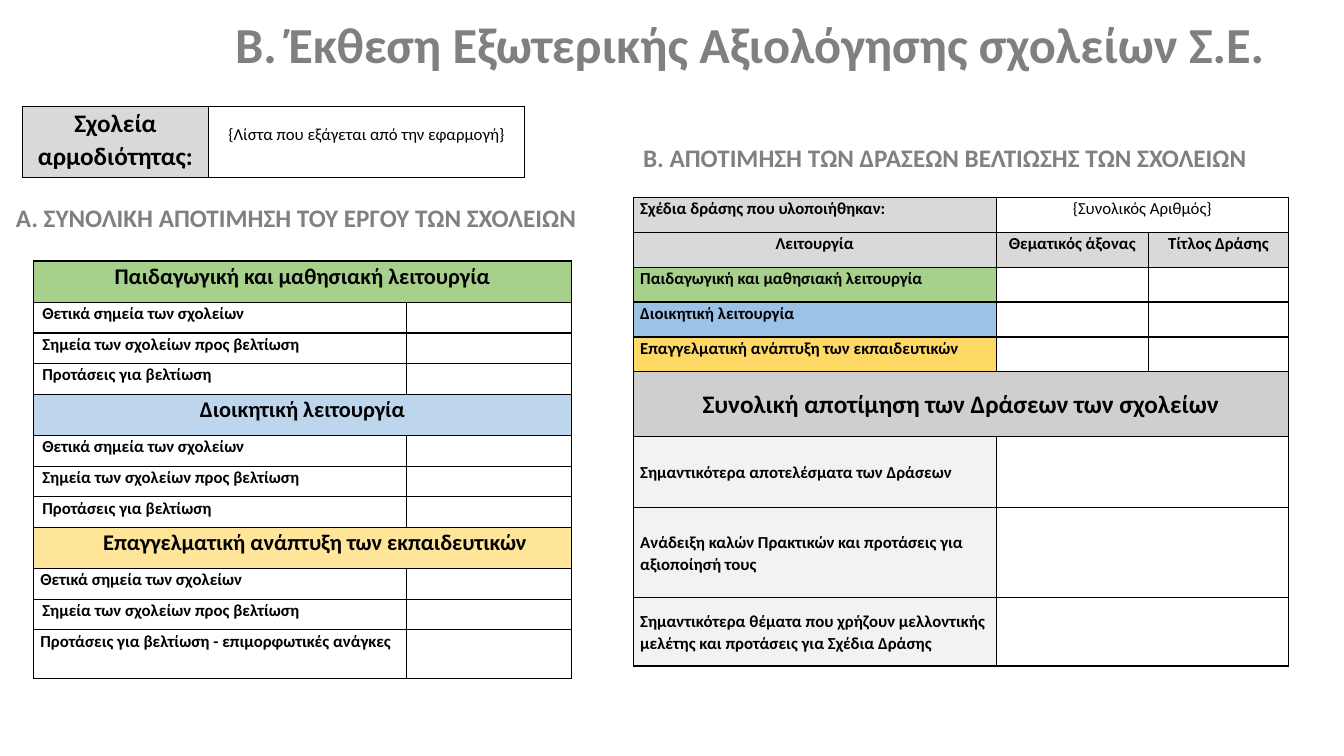
import pptx
import pptx.util
import pptx.dml.color
import pptx.enum.text
import pptx.oxml
import pptx.oxml.ns
from pptx.util import Inches

COLORS = {
    "heading": "808080", "text": "000000", "label": "D9D9D9", "summary": "D0CECE", "pale": "F2F2F2",
    "green": "A8D08D", "light_blue": "BDD6EE", "blue": "9CC2E5", "light_gold": "FFE599", "gold": "FFD966",
}
LEFT, CENTER = pptx.enum.text.PP_ALIGN.LEFT, pptx.enum.text.PP_ALIGN.CENTER
TOP, MIDDLE = pptx.enum.text.MSO_ANCHOR.TOP, pptx.enum.text.MSO_ANCHOR.MIDDLE


def add_grid(left, top, widths, heights):
    """Add an unfilled table with thin black borders around every cell."""
    frame = slide.shapes.add_table(len(heights), len(widths), Inches(left), Inches(top),
                                   Inches(sum(widths)), Inches(sum(heights)))
    table = frame.table
    table.first_row = table.horz_banding = False
    for column, width in zip(table.columns, widths):
        column.width = Inches(width)
    for row, height in zip(table.rows, heights):
        row.height = Inches(height)
    for cell in table.iter_cells():
        cell.margin_left = cell.margin_right = Inches(0.07)
        cell.margin_top = cell.margin_bottom = 0
        properties = cell._tc.get_or_add_tcPr()
        for side in ("lnL", "lnR", "lnT", "lnB"):
            properties.append(pptx.oxml.parse_xml(
                f'<a:{side} {pptx.oxml.ns.nsdecls("a")} w="12700"><a:solidFill>'
                f'<a:srgbClr val="{COLORS["text"]}"/></a:solidFill></a:{side}>'))
        cell.fill.background()
        cell.text_frame.paragraphs[0]._p.get_or_add_endParaRPr().set("sz", "1200")
    return table


def write(target, text, size=12, color="text", align=LEFT, bold=True, spacing=1.07, fill=None, anchor=TOP):
    """Put one formatted paragraph in a cell or text box."""
    target.text_frame.text = text
    para = target.text_frame.paragraphs[0]
    para.alignment = align
    para.line_spacing = spacing
    font = para.runs[0].font
    font.name, font.size, font.bold = "Calibri", pptx.util.Pt(size), bold
    font.color.rgb = pptx.dml.color.RGBColor.from_string(COLORS[color])
    if fill:
        target.fill.solid()
        target.fill.fore_color.rgb = pptx.dml.color.RGBColor.from_string(COLORS[fill])
    if anchor != TOP:
        target.vertical_anchor = anchor


deck = pptx.Presentation()
deck.slide_width, deck.slide_height = Inches(13.33), Inches(7.5)
slide = deck.slides.add_slide(deck.slide_layouts[6])

# Headings
headings = [
    ("Β. Έκθεση Εξωτερικής Αξιολόγησης σχολείων Σ.Ε.", (1.55, 0.12, 11.78, 0.7), 36, CENTER, 0.9),
    ("Α. ΣΥΝΟΛΙΚΗ ΑΠΟΤΙΜΗΣΗ ΤΟΥ ΕΡΓΟΥ ΤΩΝ ΣΧΟΛΕΙΩΝ", (0.06, 1.96, 5.88, 0.4), 18, LEFT, 1.0),
    ("Β. ΑΠΟΤΙΜΗΣΗ ΤΩΝ ΔΡΑΣΕΩΝ ΒΕΛΤΙΩΣΗΣ ΤΩΝ ΣΧΟΛΕΙΩΝ", (6.28, 1.36, 6.49, 0.4), 18, LEFT, 1.0),
]
for text, place, size, align, spacing in headings:
    box = slide.shapes.add_textbox(*map(Inches, place))
    box.text_frame.word_wrap = True
    box.text_frame.vertical_anchor = MIDDLE
    write(box, text, size, "heading", align, spacing=spacing)

# Schools in charge
schools = add_grid(0.22, 1.06, [1.85, 3.13], [0.7])
write(schools.cell(0, 0), "Σχολεία αρμοδιότητας:", 18, align=CENTER, fill="label")
write(schools.cell(0, 1), "{Λίστα που εξάγεται από την εφαρμογή}", align=CENTER, bold=False)
schools.cell(0, 1).margin_top = Inches(0.16)

# Overall appraisal: three functions with three points each
last_point = "Προτάσεις για βελτίωση - επιμορφωτικές ανάγκες"
points = ["Θετικά σημεία των σχολείων", "Σημεία των σχολείων προς βελτίωση", "Προτάσεις για βελτίωση"]
functions = [
    ("Παιδαγωγική και μαθησιακή λειτουργία", "green", points),
    ("Διοικητική λειτουργία", "light_blue", points),
    ("Επαγγελματική ανάπτυξη των εκπαιδευτικών", "light_gold", points[:2] + [last_point]),
]
header_height, last_height = 0.41, 0.48
point_height = (4.14 - 3 * header_height - last_height) / 8
heights = ([header_height] + [point_height] * 3) * 3
heights[-1] = last_height
appraisal = add_grid(0.33, 2.59, [3.7, 1.64], heights)
for group, (title, fill, labels) in enumerate(functions):
    first = group * 4
    header = appraisal.cell(first, 0)
    header.merge(appraisal.cell(first, 1))
    write(header, title, 16, align=CENTER, fill=fill)
    for row, label in enumerate(labels, first + 1):
        write(appraisal.cell(row, 0), label)
        if row not in (9, 11):
            appraisal.cell(row, 0).margin_left = Inches(0.09)
appraisal.cell(8, 0).margin_left = Inches(0.32)

# Improvement actions
summary_heights = [0.64, 0.71, 0.89, 0.68]
plan_height = (4.65 - sum(summary_heights)) / 5
actions = add_grid(6.28, 1.96, [3.6, 1.51, 1.39], [plan_height] * 5 + summary_heights)
for row in (0, 6, 7, 8):
    actions.cell(row, 1).merge(actions.cell(row, 2))
actions.cell(5, 0).merge(actions.cell(5, 2))
write(actions.cell(0, 0), "Σχέδια δράσης που υλοποιήθηκαν:", fill="label")
write(actions.cell(0, 1), "{Συνολικός Αριθμός}", align=CENTER, bold=False)
for column, text in enumerate(["Λειτουργία", "Θεματικός άξονας", "Τίτλος Δράσης"]):
    write(actions.cell(1, column), text, align=CENTER, fill="label")
for row, ((title, _, _), fill) in enumerate(zip(functions, ["green", "blue", "gold"]), 2):
    write(actions.cell(row, 0), title, fill=fill)
write(actions.cell(5, 0), "Συνολική αποτίμηση των Δράσεων των σχολείων", 18,
      align=CENTER, fill="summary", anchor=MIDDLE)
summaries = [
    "Σημαντικότερα αποτελέσματα των Δράσεων",
    "Ανάδειξη καλών Πρακτικών και προτάσεις για αξιοποίησή τους",
    "Σημαντικότερα θέματα που χρήζουν μελλοντικής μελέτης και προτάσεις για Σχέδια Δράσης",
]
for row, text in enumerate(summaries, 6):
    write(actions.cell(row, 0), text, fill="pale", anchor=MIDDLE)

deck.save("out.pptx")
